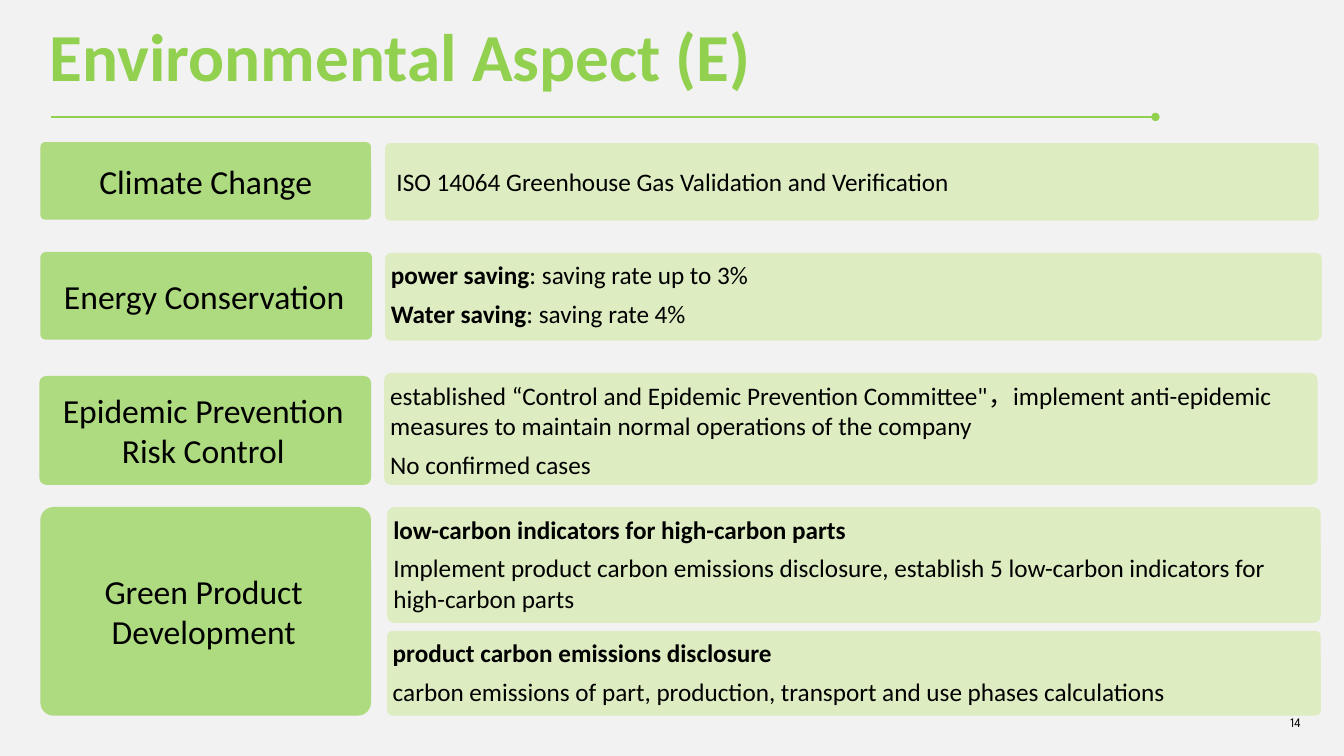
from lxml import etree
from pptx import Presentation
from pptx import util as u
from pptx.dml.color import RGBColor
from pptx.enum import shapes, text
from pptx.oxml.ns import qn

BACKGROUND = RGBColor(0xF2, 0xF2, 0xF2)
GREEN = RGBColor(0x92, 0xD0, 0x50)
PALE_GREEN = RGBColor(0xD6, 0xEA, 0xAF)
BLACK = RGBColor(0, 0, 0)

OPACITY = 70
CORNER = 0.063
DEFAULT_INSETS = (0.1, 0.05, 0.1, 0.05)
TIGHT_INSETS = (0.04, 0.05, 0.08, 0.05)
NO_INSETS = (0, 0, 0, 0)
TOP, MIDDLE = text.MSO_ANCHOR.TOP, text.MSO_ANCHOR.MIDDLE
LEFT, CENTER, RIGHT = text.PP_ALIGN.LEFT, text.PP_ALIGN.CENTER, text.PP_ALIGN.RIGHT

# Each topic: label, label box, insets, card anchor, cards.
# Each card: box, paragraphs; each paragraph: runs of (text, bold).
TOPICS = [
    ("Climate Change", (0.4, 1.41, 3.28, 0.77), DEFAULT_INSETS, MIDDLE, [
        ((3.82, 1.42, 9.26, 0.77), [
            [("ISO 14064 Greenhouse Gas Validation and Verification", False)]]),
    ]),
    ("Energy Conservation", (0.4, 2.5, 3.29, 0.87), TIGHT_INSETS, TOP, [
        ((3.82, 2.51, 9.29, 0.87), [
            [("power saving", True), (": saving rate up to 3%", False)],
            [("Water saving", True), (": saving rate 4%", False)]]),
    ]),
    ("Epidemic Prevention Risk Control", (0.39, 3.73, 3.29, 1.08), TIGHT_INSETS, TOP, [
        ((3.81, 3.7, 9.26, 1.11), [
            [("established “Control and Epidemic Prevention Committee\"，implement "
              "anti-epidemic measures to maintain normal operations of the company", False)],
            [("No confirmed cases", False)]]),
    ]),
    ("Green Product Development", (0.4, 5.03, 3.28, 2.07), TIGHT_INSETS, TOP, [
        ((3.84, 5.03, 9.26, 1.15), [
            [("low-carbon indicators for high-carbon parts", True)],
            [("Implement product carbon emissions disclosure, establish 5 low-carbon "
              "indicators for high-carbon parts", False)]]),
        ((3.84, 6.26, 9.26, 0.84), [
            [("product carbon emissions disclosure", True)],
            [("carbon emissions of part, production, transport and use phases "
              "calculations", False)]]),
    ]),
]


def inches(box):
    return [u.Inches(length) for length in box]


def write(shape, paragraphs, size, insets, anchor=TOP, align=LEFT, color=BLACK,
          font="Calibri", spacing=None):
    """Fill a shape with paragraphs, each a list of (text, bold) runs."""
    frame = shape.text_frame
    left, top, right, bottom = inches(insets)
    frame_format = {"word_wrap": True, "vertical_anchor": anchor,
                    "margin_left": left, "margin_top": top,
                    "margin_right": right, "margin_bottom": bottom}
    for name, value in frame_format.items():
        setattr(frame, name, value)
    for index, runs in enumerate(paragraphs):
        paragraph = frame.add_paragraph() if index else frame.paragraphs[0]
        paragraph.alignment = align
        paragraph.line_spacing = spacing
        if index:
            paragraph.space_before = u.Pt(6)
        for words, bold in runs:
            run = paragraph.add_run()
            run.text = words
            for name, value in {"name": font, "size": u.Pt(size), "bold": bold}.items():
                setattr(run.font, name, value)
            run.font.color.rgb = color


def add_panel(slide, box, color):
    """Add a translucent rounded rectangle."""
    panel = slide.shapes.add_shape(shapes.MSO_SHAPE.ROUNDED_RECTANGLE, *inches(box))
    panel.adjustments[0] = CORNER
    panel.shadow.inherit = False
    panel.line.fill.background()
    panel.fill.solid()
    panel.fill.fore_color.rgb = color
    color_element = panel.fill._xPr.find(".//" + qn("a:srgbClr"))
    etree.SubElement(color_element, qn("a:alpha"), val=str(OPACITY * 1000))
    return panel


def add_header(slide, box):
    """Add the title and, below it, the rule that ends in a dot."""
    left, top, width, height = box
    title = slide.shapes.add_textbox(*inches(box))
    write(title, [[("Environmental Aspect (E)", True)]], 48, NO_INSETS,
          color=GREEN, spacing=0.9)
    rule_left, rule_top = left + 0.02, top + height + 0.2
    rule = slide.shapes.add_connector(
        shapes.MSO_CONNECTOR.STRAIGHT,
        *inches((rule_left, rule_top, rule_left + 10.95, rule_top)))
    rule.line.color.rgb = GREEN
    rule.line.width = u.Pt(1.5)
    etree.SubElement(rule.line._get_or_add_ln(), qn("a:tailEnd"), type="oval")
    etree.SubElement(rule._element.spPr, qn("a:effectLst"))


def add_topic(slide, label, label_box, insets, card_anchor, cards):
    panel = add_panel(slide, label_box, GREEN)
    write(panel, [[(label, False)]], 24, insets, MIDDLE, CENTER)
    for box, paragraphs in cards:
        card = add_panel(slide, box, PALE_GREEN)
        write(card, paragraphs, 18, insets, card_anchor)


def add_page_number(slide, box):
    number = slide.shapes.add_textbox(*inches(box))
    write(number, [[("14", False)]], 9.3, (0.13, 0.07, 0.13, 0.07), MIDDLE, RIGHT,
          font="League Spartan")


def main():
    presentation = Presentation()
    presentation.slide_width, presentation.slide_height = inches((13.33, 7.5))
    slide = presentation.slides.add_slide(presentation.slide_layouts[6])
    slide.background.fill.solid()
    slide.background.fill.fore_color.rgb = BACKGROUND
    add_page_number(slide, (12.57, 6.9, 0.46, 0.53))
    add_header(slide, (0.49, 0.23, 10.2, 0.73))
    for topic in TOPICS:
        add_topic(slide, *topic)
    presentation.save("out.pptx")


if __name__ == "__main__":
    main()
